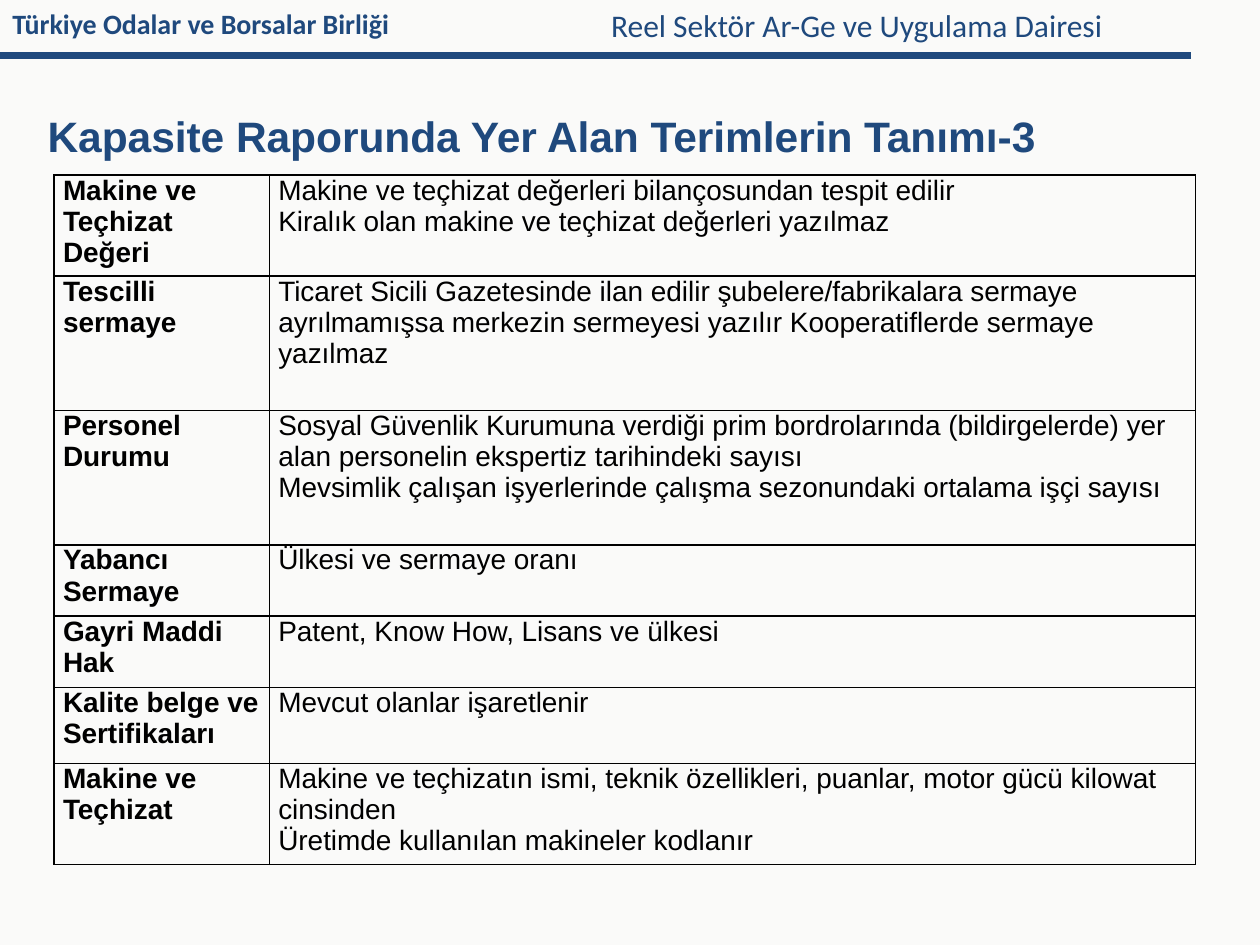
from lxml.etree import SubElement
from pptx import Presentation
from pptx.dml.color import RGBColor
from pptx.enum.shapes import MSO_CONNECTOR
from pptx.enum.text import MSO_ANCHOR, MSO_AUTO_SIZE
from pptx.oxml import parse_xml
from pptx.oxml.ns import nsdecls, qn
from pptx.util import Cm, Pt

NAVY = "1F497D"
BLACK = "000000"
COLUMN_WIDTHS = [4.34, 18.67]
TERMS = [
    (2.03, "Makine ve Teçhizat Değeri",
     ["Makine ve teçhizat değerleri bilançosundan tespit edilir",
      "Kiralık olan makine ve teçhizat değerleri yazılmaz"]),
    (2.71, "Tescilli sermaye",
     ["Ticaret Sicili Gazetesinde ilan edilir şubelere/fabrikalara sermaye "
      "ayrılmamışsa merkezin sermeyesi yazılır Kooperatiflerde sermaye yazılmaz"]),
    (2.71, "Personel Durumu",
     ["Sosyal Güvenlik Kurumuna verdiği prim bordrolarında (bildirgelerde) yer "
      "alan personelin ekspertiz tarihindeki sayısı",
      "Mevsimlik çalışan işyerlerinde çalışma sezonundaki ortalama işçi sayısı"]),
    (1.44, "Yabancı Sermaye", ["Ülkesi ve sermaye oranı"]),
    (1.44, "Gayri Maddi Hak", ["Patent, Know How, Lisans ve ülkesi"]),
    (1.53, "Kalite belge ve Sertifikaları", ["Mevcut olanlar işaretlenir"]),
    (2.03, "Makine ve Teçhizat",
     ["Makine ve teçhizatın ismi, teknik özellikleri, puanlar, motor gücü "
      "kilowat cinsinden",
      "Üretimde kullanılan makineler kodlanır"]),
]


def color(hex_code):
    return RGBColor.from_string(hex_code)


def write(para, text, size=16, font="Arial", fill=BLACK, bold=False):
    span = para.add_run()
    span.text = text
    span.font.size = Pt(size)
    span.font.name = font
    span.font.bold = bold
    span.font.color.rgb = color(fill)
    return span


def add_text(page, left, top, width, height, text, **text_format):
    box = page.shapes.add_textbox(Cm(left), Cm(top), Cm(width), Cm(height))
    box.text_frame.word_wrap = True
    span = write(box.text_frame.paragraphs[0], text, **text_format)
    return box.text_frame, span


def add_text_shadow(span):
    shadow = parse_xml(
        f'<a:effectLst {nsdecls("a")}><a:outerShdw blurRad="38100" dist="38100" '
        'dir="2700000" algn="tl"><a:srgbClr val="000000"><a:alpha val="43000"/>'
        "</a:srgbClr></a:outerShdw></a:effectLst>")
    span.font.fill._xPr.find(qn("a:solidFill")).addnext(shadow)


def add_rule(page, left, top, right, line_color, width):
    rule = page.shapes.add_connector(
        MSO_CONNECTOR.STRAIGHT, Cm(left), Cm(top), Cm(right), Cm(top))
    rule.line.color.rgb = color(line_color)
    rule.line.width = Pt(width)
    SubElement(rule._element.spPr, qn("a:effectLst"))


def set_borders(cell, line_color, width):
    properties = cell._tc.get_or_add_tcPr()
    for index, side in enumerate(("lnL", "lnR", "lnT", "lnB")):
        properties.insert(index, parse_xml(
            f'<a:{side} {nsdecls("a")} w="{Pt(width)}"><a:solidFill>'
            f'<a:srgbClr val="{line_color}"/></a:solidFill></a:{side}>'))


def fill_cell(cell, lines, bold):
    cell.margin_left = cell.margin_right = Cm(0.18)
    cell.margin_top = cell.margin_bottom = 0
    cell.fill.background()
    set_borders(cell, BLACK, 1)
    frame = cell.text_frame
    for index, line in enumerate(lines):
        para = frame.add_paragraph() if index else frame.paragraphs[0]
        write(para, line, bold=bold)


def add_terms_table(page, left, top):
    height = sum(term[0] for term in TERMS)
    table = page.shapes.add_table(
        len(TERMS), len(COLUMN_WIDTHS), Cm(left), Cm(top),
        Cm(sum(COLUMN_WIDTHS)), Cm(height)).table
    table.first_row = table.horz_banding = False
    for column, width in zip(table.columns, COLUMN_WIDTHS):
        column.width = Cm(width)
    for row, (row_height, term, definition) in zip(table.rows, TERMS):
        row.height = Cm(row_height)
        fill_cell(row.cells[0], [term], bold=True)
        fill_cell(row.cells[1], definition, bold=False)


def main():
    deck = Presentation()
    deck.slide_width, deck.slide_height = Cm(25.4), Cm(19.05)
    page = deck.slides.add_slide(deck.slide_layouts[6])
    page.background.fill.solid()
    page.background.fill.fore_color.rgb = color("FAFAF9")

    add_rule(page, 0, 1.12, 24, NAVY, 4)
    frame, _ = add_text(page, 0, 0, 20.7, 0.94, "Türkiye Odalar ve Borsalar Birliği",
                        font="Calibri", fill=NAVY, bold=True)
    frame.auto_size = MSO_AUTO_SIZE.SHAPE_TO_FIT_TEXT

    frame, _ = add_text(page, 0.71, 1.93, 23.47, 1.19,
                        "Kapasite Raporunda Yer Alan Terimlerin Tanımı-3",
                        size=24.3, fill=NAVY, bold=True)
    frame.vertical_anchor = MSO_ANCHOR.MIDDLE
    frame.margin_top, frame.margin_bottom = Cm(0.25), 0
    frame.paragraphs[0].line_spacing = 1.15

    frame, span = add_text(page, 12.07, 0, 11.2, 1.02,
                           "Reel Sektör Ar-Ge ve Uygulama Dairesi",
                           size=18, font="Calibri", fill=NAVY)
    frame.auto_size = MSO_AUTO_SIZE.SHAPE_TO_FIT_TEXT
    add_text_shadow(span)

    add_terms_table(page, 1.09, 3.53)
    deck.save("out.pptx")


if __name__ == "__main__":
    main()
